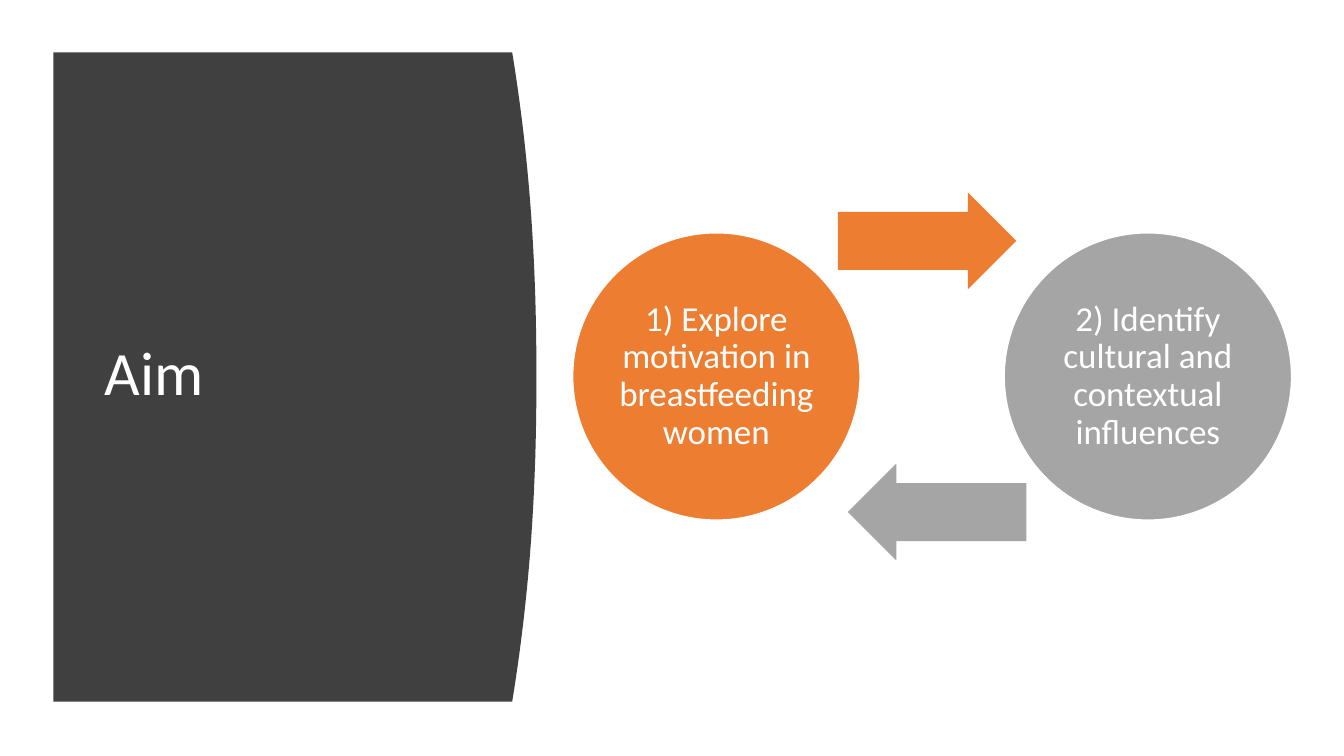
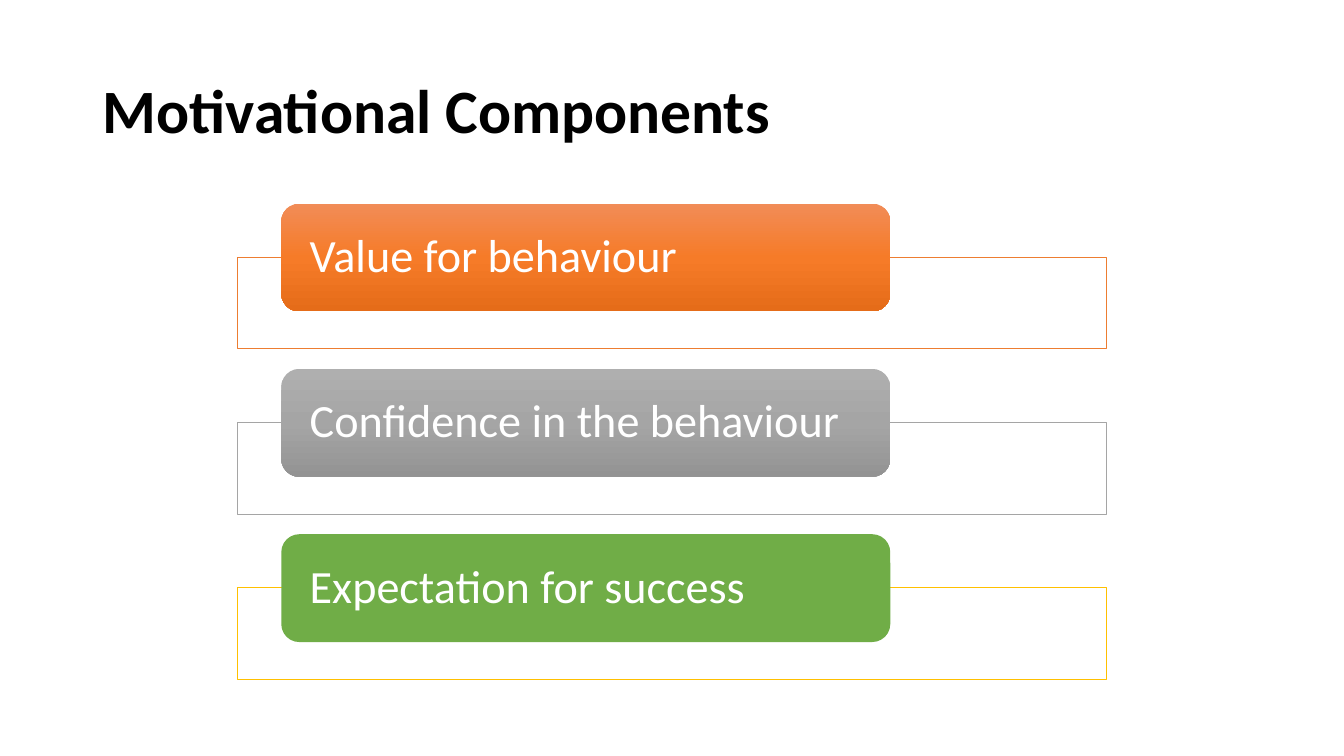
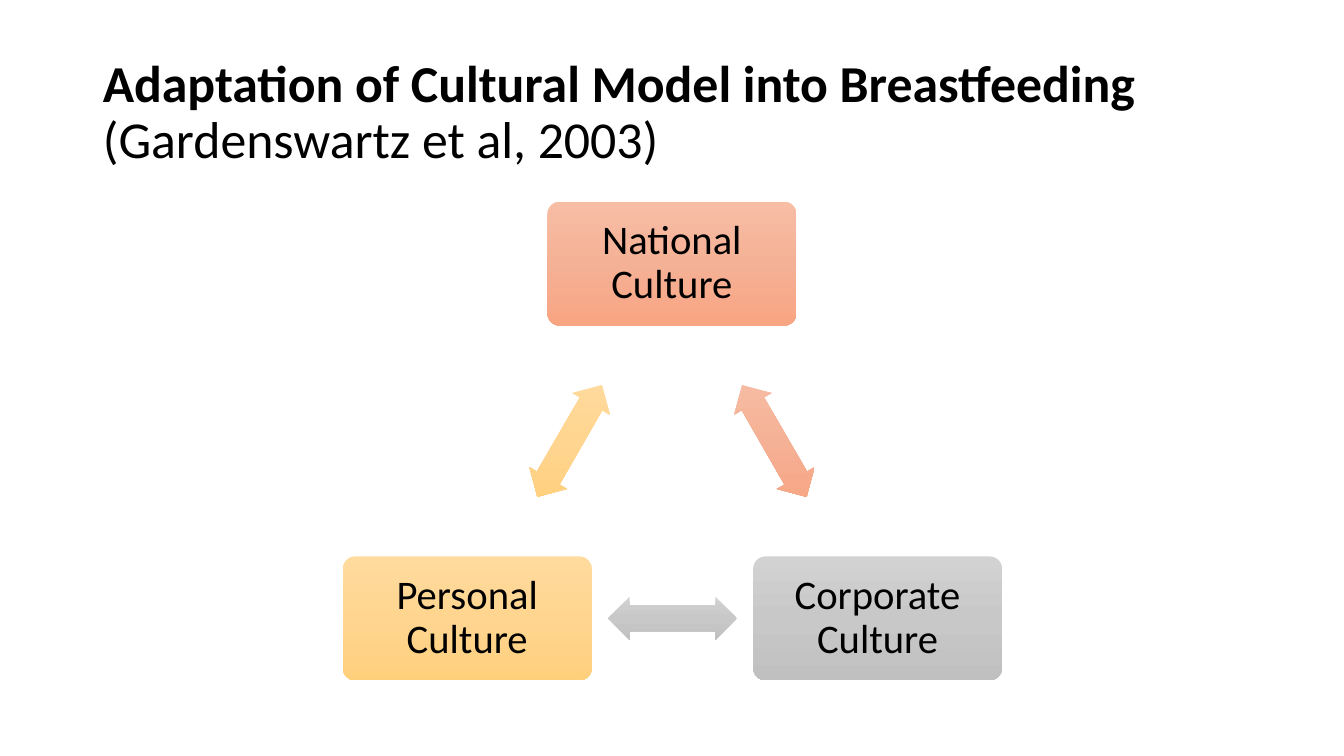
"""Build three slides on motivation and culture in breastfeeding."""
from copy import deepcopy

from pptx import Presentation
from pptx.dml.color import RGBColor
from pptx.enum import shapes, text
from pptx.util import Inches, Pt

FONT = "Calibri"
C = {
    "white": "FFFFFF", "black": "000000", "dark": "404040",
    "orange": "ED7D31", "gray": "A5A5A5", "gold": "FFC000", "green": "70AD47",
}
GRAD = {
    "orange": ("F18C57", "F67B28", "E56C19"),
    "gray": ("AFAFAF", "A5A5A5", "939393"),
    "pale_orange": ("F7BDA5", "F5B196", "F8A582"),
    "pale_gray": ("D2D2D2", "C8C8C8", "C0C0C0"),
    "pale_gold": ("FFDB9E", "FFD590", "FFD07C"),
}
KIND = shapes.MSO_SHAPE
LEFT, CENTER = text.PP_ALIGN.LEFT, text.PP_ALIGN.CENTER


def write(sp, line, size=25, color="white", bold=False, align=CENTER, inset=(0.1, 0.05), note=None):
    tf = sp.text_frame
    tf.word_wrap = True
    tf.auto_size = text.MSO_AUTO_SIZE.NONE
    tf.vertical_anchor = text.MSO_ANCHOR.MIDDLE
    tf.margin_left = tf.margin_right = Inches(inset[0])
    tf.margin_top = tf.margin_bottom = Inches(inset[1])
    p = tf.paragraphs[0]
    p.alignment = align
    p.line_spacing = 0.9
    runs = [(line, bold)]
    if note:
        runs.append((note, False))
    for i, (words, heavy) in enumerate(runs):
        if i:
            p.add_line_break()
        r = p.add_run()
        r.text = words
        r.font.name = FONT
        r.font.size = Pt(size)
        r.font.bold = heavy
        r.font.color.rgb = RGBColor.from_string(C[color])


def style(sp, fill=None, grad=None, line=None, width=1):
    sp.shadow.inherit = False
    if grad:
        sp.fill.gradient()
        sp.fill.gradient_angle = 270
        stops = sp.fill.gradient_stops
        first = sp.element.spPr.find(".//{*}gs")
        first.addnext(deepcopy(first))
        sp.element.spPr.find("{*}gradFill").set("rotWithShape", "0")
        stops = sp.fill.gradient_stops
        for stop, position, color in zip(stops, (0, 0.5, 1), GRAD[grad]):
            stop.position = position
            stop.color.rgb = RGBColor.from_string(color)
    else:
        sp.fill.solid()
        sp.fill.fore_color.rgb = RGBColor.from_string(C[fill])
    if line:
        sp.line.color.rgb = RGBColor.from_string(C[line])
        sp.line.width = Pt(width)
    else:
        sp.line.fill.background()
    return sp


prs = Presentation()
prs.slide_width, prs.slide_height = Inches(13.33), Inches(7.5)

TOP_TITLE = (0.92, 0.4, 11.5, 1.45)
titles = [
    ((0.94, 1.11, 3.74, 5.24), dict(line="Aim", size=44)),
    (TOP_TITLE, dict(line="Motivational Components", size=44, color="black", bold=True)),
    (TOP_TITLE, dict(line="Adaptation of Cultural Model into Breastfeeding", size=37,
                     color="black", bold=True, note="(Gardenswartz et al, 2003)")),
]
slides = []
for box, words in titles:
    s = prs.slides.add_slide(prs.slide_layouts[5])
    title = s.shapes.title
    title.left, title.top, title.width, title.height = map(Inches, box)
    write(title, align=LEFT, **words)
    slides.append(s)
aim, components, model = slides

top, half, steps = 0.52, 3.22, 40
fb = aim.shapes.build_freeform(Inches(0.53), Inches(top))
curve = []
for i in range(steps + 1):
    t = 2 * i / steps - 1
    curve.append((Inches(5.32 - 0.24 * abs(t) ** 2.2), Inches(top + half * (1 + t))))
fb.add_line_segments(curve + [(Inches(0.53), Inches(top + 2 * half))], close=True)
band = style(fb.convert_to_shape(), "dark")
aim.shapes.title.element.addprevious(band.element)

goals = [
    (5.68, "orange", "1) Explore motivation in breastfeeding women", 8.31, 1.91, 0),
    (9.96, "gray", "2) Identify cultural and contextual influences", 8.41, 4.6, 180),
]
for x, color, words, arrow_x, arrow_y, turn in goals:
    sp = aim.shapes.add_shape(KIND.OVAL, Inches(x), Inches(2.31), Inches(2.85), Inches(2.85))
    write(style(sp, color, line="white"), words, inset=(0.03, 0.03))
    sp = aim.shapes.add_shape(KIND.RIGHT_ARROW, Inches(arrow_x), Inches(arrow_y),
                              Inches(1.77), Inches(0.96))
    sp.adjustments[0] = 0.6
    sp.rotation = turn
    style(sp, color)

parts = [
    ("Value for behaviour", "orange", dict(grad="orange")),
    ("Confidence in the behaviour", "gray", dict(grad="gray")),
    ("Expectation for success", "gold", dict(fill="green")),
]
for i, (words, outline, look) in enumerate(parts):
    y = 2.02 + 1.64 * i
    sp = components.shapes.add_shape(KIND.RECTANGLE, Inches(2.35), Inches(y + 0.53),
                                     Inches(8.62), Inches(0.91))
    style(sp, "white", line=outline, width=0.5)
    sp = components.shapes.add_shape(KIND.ROUNDED_RECTANGLE, Inches(2.79), Inches(y),
                                     Inches(6.04), Inches(1.07))
    write(style(sp, **look), words, size=33, align=LEFT, inset=(0.23, 0))

cultures = [
    ("National Culture", "pale_orange", 5.43, 2, 7.04, 4.16, 60),
    ("Corporate Culture", "pale_gray", 7.47, 5.52, 6.03, 5.92, 180),
    ("Personal Culture", "pale_gold", 3.4, 5.52, 5.01, 4.16, 300),
]
for words, grad, x, y, arrow_x, arrow_y, turn in cultures:
    sp = model.shapes.add_shape(KIND.ROUNDED_RECTANGLE, Inches(x), Inches(y),
                                Inches(2.47), Inches(1.23))
    sp.adjustments[0] = 0.1
    write(style(sp, grad=grad), words, size=29, color="black", inset=(0.12, 0.12))
    sp = model.shapes.add_shape(KIND.LEFT_RIGHT_ARROW, Inches(arrow_x), Inches(arrow_y),
                                Inches(1.28), Inches(0.43))
    sp.adjustments[0] = 0.6
    sp.rotation = turn
    style(sp, grad=grad)

prs.save("out.pptx")
